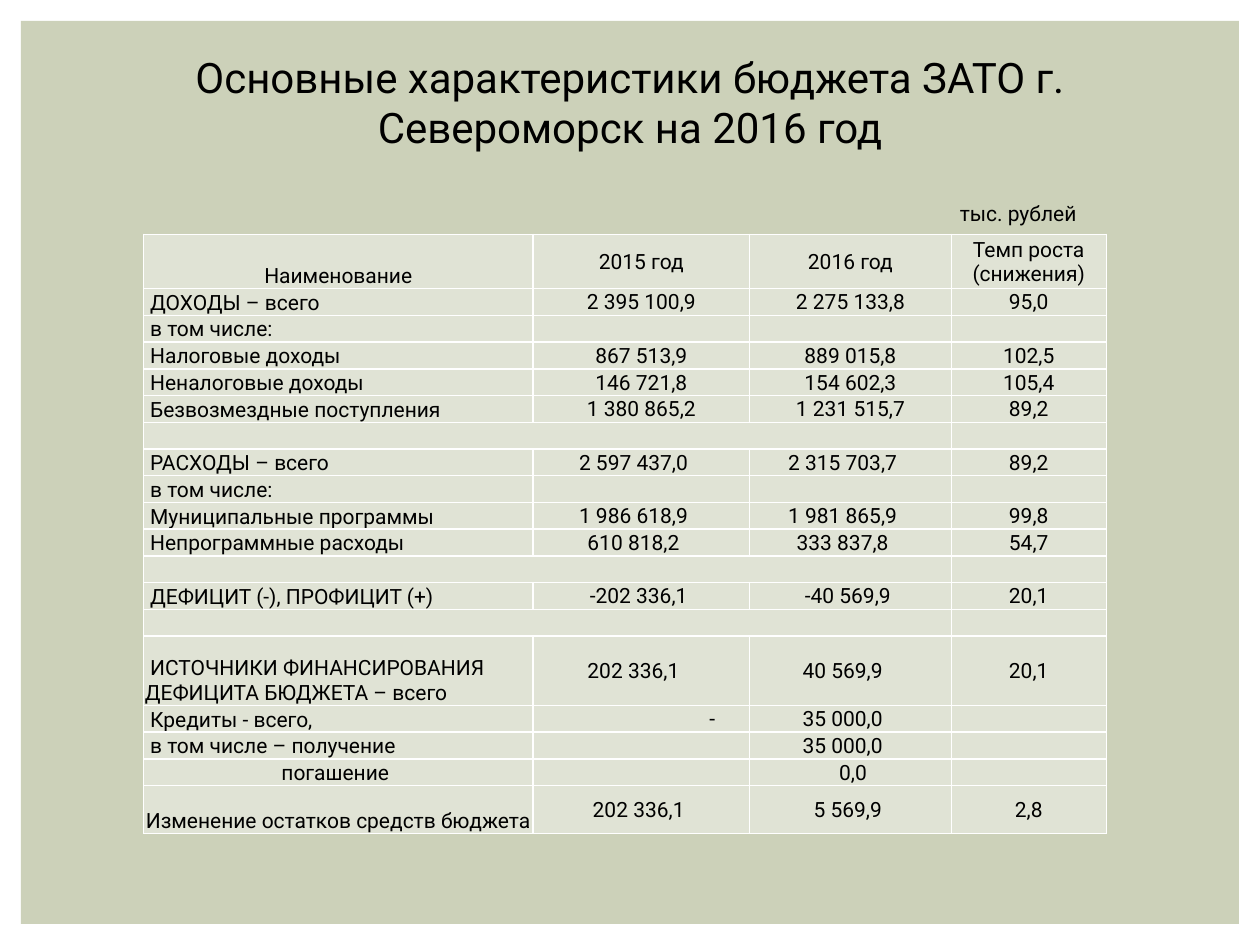
from lxml import etree
from pptx import Presentation
from pptx import util as u
from pptx.dml.color import RGBColor
from pptx.enum import shapes, text
from pptx.oxml.ns import qn

COLORS = {"panel": "CCD1B9", "cell": "E0E3D5", "border": "FFFFFF", "text": "000000"}
LEFT, CENTER, RIGHT = text.PP_ALIGN.LEFT, text.PP_ALIGN.CENTER, text.PP_ALIGN.RIGHT
BOTTOM, MIDDLE = text.MSO_ANCHOR.BOTTOM, text.MSO_ANCHOR.MIDDLE
SPACE, INSET = 3, 0.72


class Deck:
    font = "Roboto"

    def __init__(self, width, height):
        self.prs = Presentation()
        self.prs.slide_width, self.prs.slide_height = u.Pt(width), u.Pt(height)
        self.s = self.prs.slides.add_slide(self.prs.slide_layouts[6])

    def color(self, name):
        return RGBColor.from_string(COLORS[name])

    def fill_text(self, tf, words, size=12, align=LEFT, indent=0):
        p = tf.paragraphs[0]
        p.text = words
        p.alignment = align
        if indent:
            p._p.get_or_add_pPr().set("indent", str(u.Pt(indent)))
        for r in p.runs:
            r.font.name, r.font.size = self.font, u.Pt(size)
            r.font.color.rgb = self.color("text")
        if not words:  # keeps empty rows low
            etree.SubElement(p._p, qn("a:endParaRPr"), sz=str(size * 100))

    def panel(self, *box):
        sp = self.s.shapes.add_shape(shapes.MSO_SHAPE.RECTANGLE, *map(u.Pt, box))
        sp.shadow.inherit = False
        sp.fill.solid()
        sp.fill.fore_color.rgb = self.color("panel")
        sp.line.fill.background()

    def label(self, words, box, size, align=LEFT):
        tf = self.s.shapes.add_textbox(*map(u.Pt, box)).text_frame
        tf.word_wrap = True
        self.fill_text(tf, words, size, align)

    def table(self, left, top, cols, rows):
        frame = self.s.shapes.add_table(len(rows), len(cols), u.Pt(left), u.Pt(top),
                                        u.Pt(sum(cols)), u.Pt(sum(rows)))
        tbl = frame.table
        for col, width in zip(tbl.columns, cols):
            col.width = u.Pt(width)
        for row, height in zip(tbl.rows, rows):
            row.height = u.Pt(height)
        return tbl

    def cell(self, cell, words, align=CENTER, anchor=MIDDLE, pad_left=0, pad_right=0, indent=0):
        cell.margin_left, cell.margin_right = u.Pt(INSET + pad_left), u.Pt(INSET + pad_right)
        cell.margin_top, cell.margin_bottom = u.Pt(INSET), 0
        cell.vertical_anchor = anchor
        self.fill_text(cell.text_frame, words, align=align, indent=indent)
        tcPr = cell._tc.get_or_add_tcPr()
        for side in ("lnL", "lnR", "lnT", "lnB"):
            ln = etree.SubElement(tcPr, qn("a:" + side), w=str(u.Pt(1)))
            fill = etree.SubElement(ln, qn("a:solidFill"))
            etree.SubElement(fill, qn("a:srgbClr"), val=COLORS["border"])
        cell.fill.solid()
        cell.fill.fore_color.rgb = self.color("cell")


# Each row: name, 2015, 2016, growth rate, spaces kept right of the amounts
ROWS = [
    ("Наименование", "2015 год", "2016 год", "Темп роста (снижения)", 0),
    ("ДОХОДЫ – всего", "2 395 100,9", "2 275 133,8", "95,0", 0),
    ("в том числе:", "", "", "", 0),
    ("Налоговые доходы", "867 513,9", "889 015,8", "102,5", 0),
    ("Неналоговые доходы", "146 721,8", "154 602,3", "105,4", 0),
    ("Безвозмездные поступления", "1 380 865,2", "1 231 515,7", "89,2", 0),
    ("", "", "", "", 0),
    ("РАСХОДЫ – всего", "2 597 437,0", "2 315 703,7", "89,2", 3),
    ("в том числе:", "", "", "", 0),
    ("Муниципальные программы", "1 986 618,9", "1 981 865,9", "99,8", 3),
    ("Непрограммные расходы", "610 818,2", "333 837,8", "54,7", 3),
    ("", "", "", "", 0),
    ("ДЕФИЦИТ (-), ПРОФИЦИТ (+)", "-202 336,1", "-40 569,9", "20,1", 1),
    ("", "", "", "", 0),
    ("ИСТОЧНИКИ ФИНАНСИРОВАНИЯ ДЕФИЦИТА БЮДЖЕТА – всего",
     "202 336,1", "40 569,9", "20,1", 3),
    ("Кредиты - всего,", "-", "35 000,0", "", 3),
    ("в том числе – получение", "", "35 000,0", "", 3),
    ("погашение", "", "0,0", "", 0),
    ("Изменение остатков средств бюджета", "202 336,1", "5 569,9", "2,8", 1),
]
COLS = [222.5, 123.8, 115.2, 88.6]
TALL = {0: 31, 14: 39.6, 18: 27.4}


def main():
    deck = Deck(720, 540)

    # Background panel and headings
    deck.panel(12, 12, 696, 516)
    deck.label("Основные характеристики бюджета ЗАТО г. Североморск на 2016 год",
               (36.7, 25.9, 646.6, 65.5), 24, CENTER)
    deck.label("тыс. рублей", (541.4, 110.9, 96.5, 21.6), 12)

    # Budget table
    heights = [TALL.get(i, 15.3) for i in range(len(ROWS))]
    tbl = deck.table(82.1, 133.9, COLS, heights)
    for i, (name, *amounts, rate, spaces) in enumerate(ROWS):
        centered = i in (0, len(ROWS) - 1)
        deck.cell(tbl.cell(i, 0), name, CENTER if centered else LEFT, BOTTOM,
                  pad_left=75 if name == "погашение" else 0,
                  indent=0 if centered else SPACE)
        for j, amount in enumerate(amounts, 1):
            dash = amount == "-"
            deck.cell(tbl.cell(i, j), amount, RIGHT if dash else CENTER,
                      pad_left=SPACE if amount == "0,0" else 0,
                      pad_right=19 if dash else spaces * SPACE)
        deck.cell(tbl.cell(i, 3), rate)
        if not name:  # separator row
            tbl.cell(i, 0).merge(tbl.cell(i, 2))

    deck.prs.save("out.pptx")


if __name__ == "__main__":
    main()
